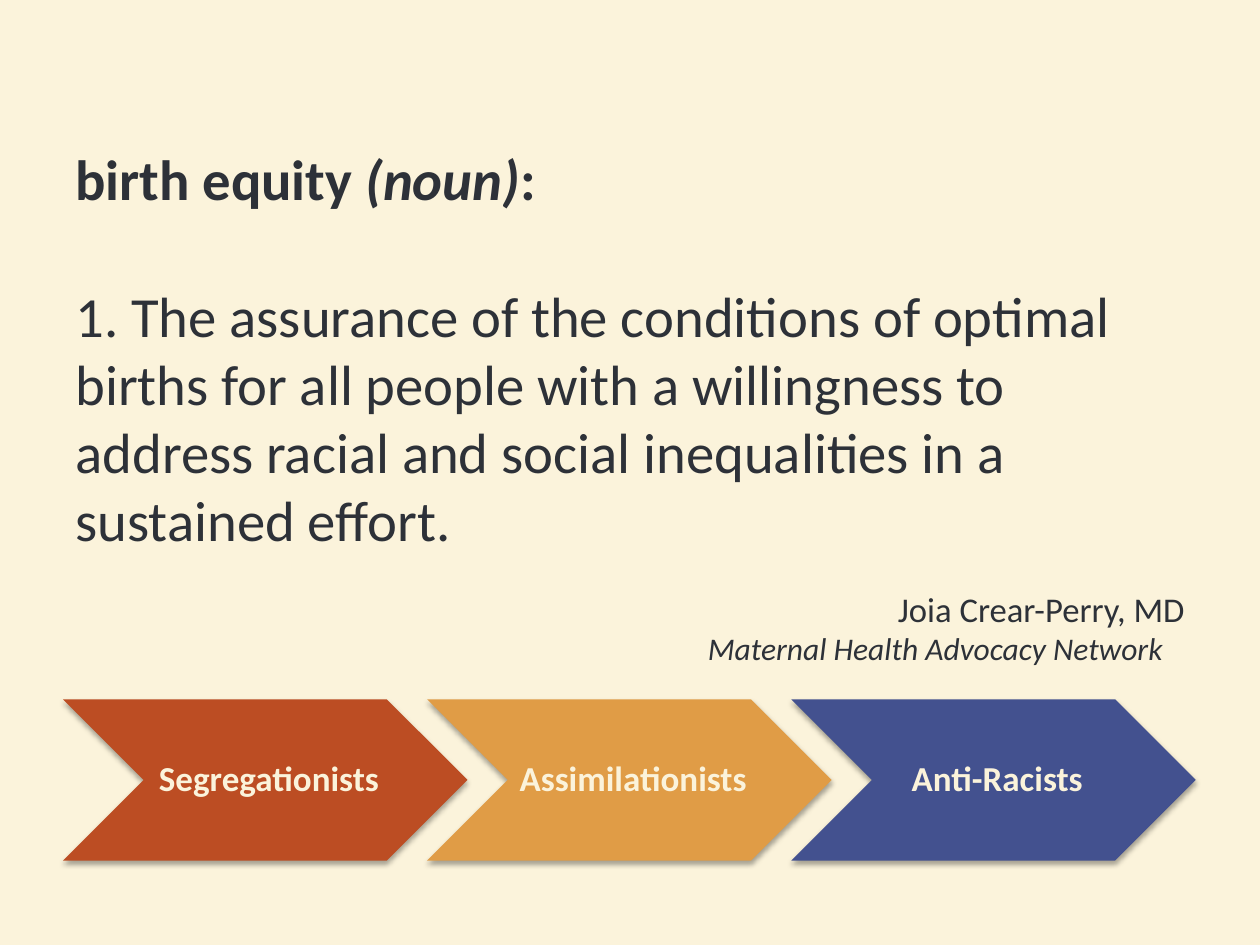
from dataclasses import dataclass

import pptx
import pptx.dml.color
import pptx.enum.shapes
import pptx.enum.text
import pptx.oxml
import pptx.oxml.ns
import pptx.util
from pptx.util import Inches

ALIGN = pptx.enum.text.PP_ALIGN
ANCHOR = pptx.enum.text.MSO_ANCHOR


@dataclass(frozen=True)
class Theme:
    font: str = "Calibri"
    cream: str = "FBF3DB"
    ink: str = "2D3138"
    rust: str = "BC4D23"
    amber: str = "E09C46"
    indigo: str = "43518F"
    body: float = 32.4
    author: float = 19.8
    affiliation: float = 18
    label: float = 20


SHADOW = (
    f'<a:effectLst {pptx.oxml.ns.nsdecls("a")}>'
    '<a:outerShdw blurRad="39370" dist="22860" dir="5400000" rotWithShape="0">'
    '<a:srgbClr val="000000"><a:alpha val="35000"/></a:srgbClr>'
    '</a:outerShdw></a:effectLst>'
)


def rgb(color):
    return pptx.dml.color.RGBColor.from_string(color)


class SlideBuilder:
    def __init__(self, prs, theme):
        self.theme = theme
        self.slide = prs.slides.add_slide(prs.slide_layouts[6])

    def background(self, color):
        fill = self.slide.background.fill
        fill.solid()
        fill.fore_color.rgb = rgb(color)

    def format_run(self, r, size, color, bold=False, italic=False):
        r.font.name = self.theme.font
        r.font.size = pptx.util.Pt(size)
        r.font.color.rgb = rgb(color)
        r.font.bold = bold
        r.font.italic = italic

    def text(self, left, top, width, height, paragraphs):
        """Each paragraph is (runs, size, alignment, space before in points, right margin);
        each run is (text, bold, italic)."""
        tf = self.slide.shapes.add_textbox(left, top, width, height).text_frame
        tf.word_wrap = True
        for i, (runs, size, align, before, margin) in enumerate(paragraphs):
            p = tf.add_paragraph() if i else tf.paragraphs[0]
            p.alignment = align
            p.space_before = pptx.util.Pt(before)
            if margin:
                p._p.get_or_add_pPr().set("marR", str(margin))
            for text, bold, italic in runs:
                r = p.add_run()
                r.text = text
                self.format_run(r, size, self.theme.ink, bold, italic)

    def chevron(self, left, top, width, height, label, color):
        s = self.slide.shapes.add_shape(
            pptx.enum.shapes.MSO_SHAPE.CHEVRON, left, top, width, height)
        s.fill.solid()
        s.fill.fore_color.rgb = rgb(color)
        s.line.fill.background()
        s.shadow.inherit = False
        sp = s._element.spPr
        sp.replace(sp.find(pptx.oxml.ns.qn("a:effectLst")), pptx.oxml.parse_xml(SHADOW))
        tf = s.text_frame
        tf.text = label
        tf.word_wrap = True
        tf.vertical_anchor = ANCHOR.MIDDLE
        tf.margin_left = Inches(0.09)
        tf.margin_right = tf.margin_top = tf.margin_bottom = Inches(0.03)
        p = tf.paragraphs[0]
        p.alignment = ALIGN.CENTER
        p.line_spacing = 0.9
        self.format_run(p.runs[0], self.theme.label, self.theme.cream, bold=True)


def main():
    theme = Theme()
    prs = pptx.Presentation()
    prs.slide_width, prs.slide_height = Inches(10), Inches(7.5)
    s = SlideBuilder(prs, theme)
    s.background(theme.cream)

    definition = (
        "1. The assurance of the conditions of optimal births for all people with "
        "a willingness to address racial and social inequalities in a sustained effort."
    )
    s.text(Inches(0.5), Inches(1.09), Inches(9), Inches(4.25), [
        ([("birth equity ", True, False), ("(noun)", True, True), (":", True, False)],
         theme.body, ALIGN.LEFT, 0, 0),
        ([(definition, False, False)], theme.body, ALIGN.LEFT, 39.5, 0),
        ([("Joia Crear-Perry, MD", False, False)],
         theme.author, ALIGN.RIGHT, 19.8, 0),
        ([("Maternal Health Advocacy Network", False, True)],
         theme.affiliation, ALIGN.RIGHT, 0, Inches(0.17)),
    ])

    stages = [
        ("Segregationists", theme.rust),
        ("Assimilationists", theme.amber),
        ("Anti-Racists", theme.indigo),
    ]
    for i, (label, color) in enumerate(stages):
        s.chevron(Inches(0.5 + 2.89 * i), Inches(5.55), Inches(3.21), Inches(1.28),
                  label, color)

    prs.save("out.pptx")


if __name__ == "__main__":
    main()
